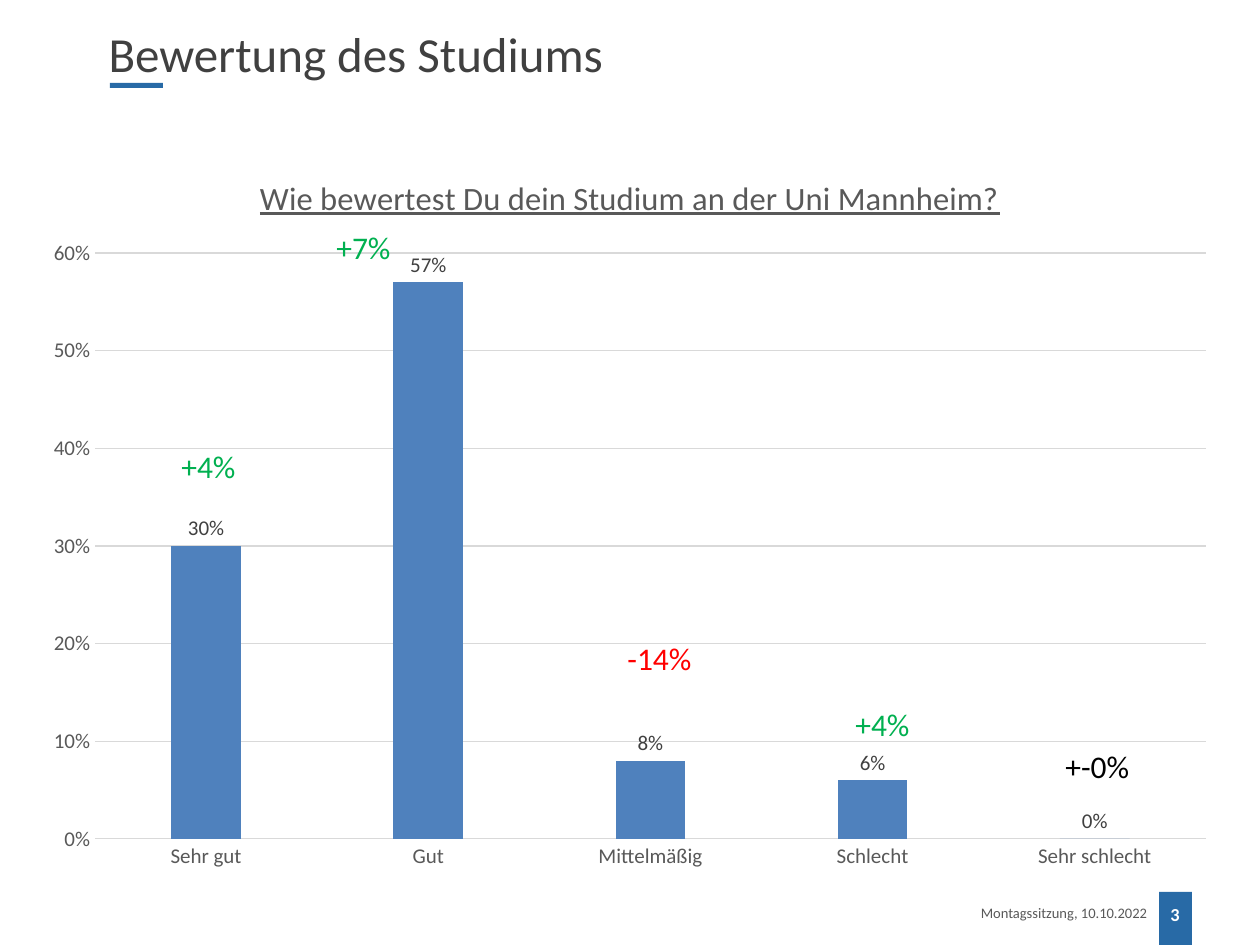
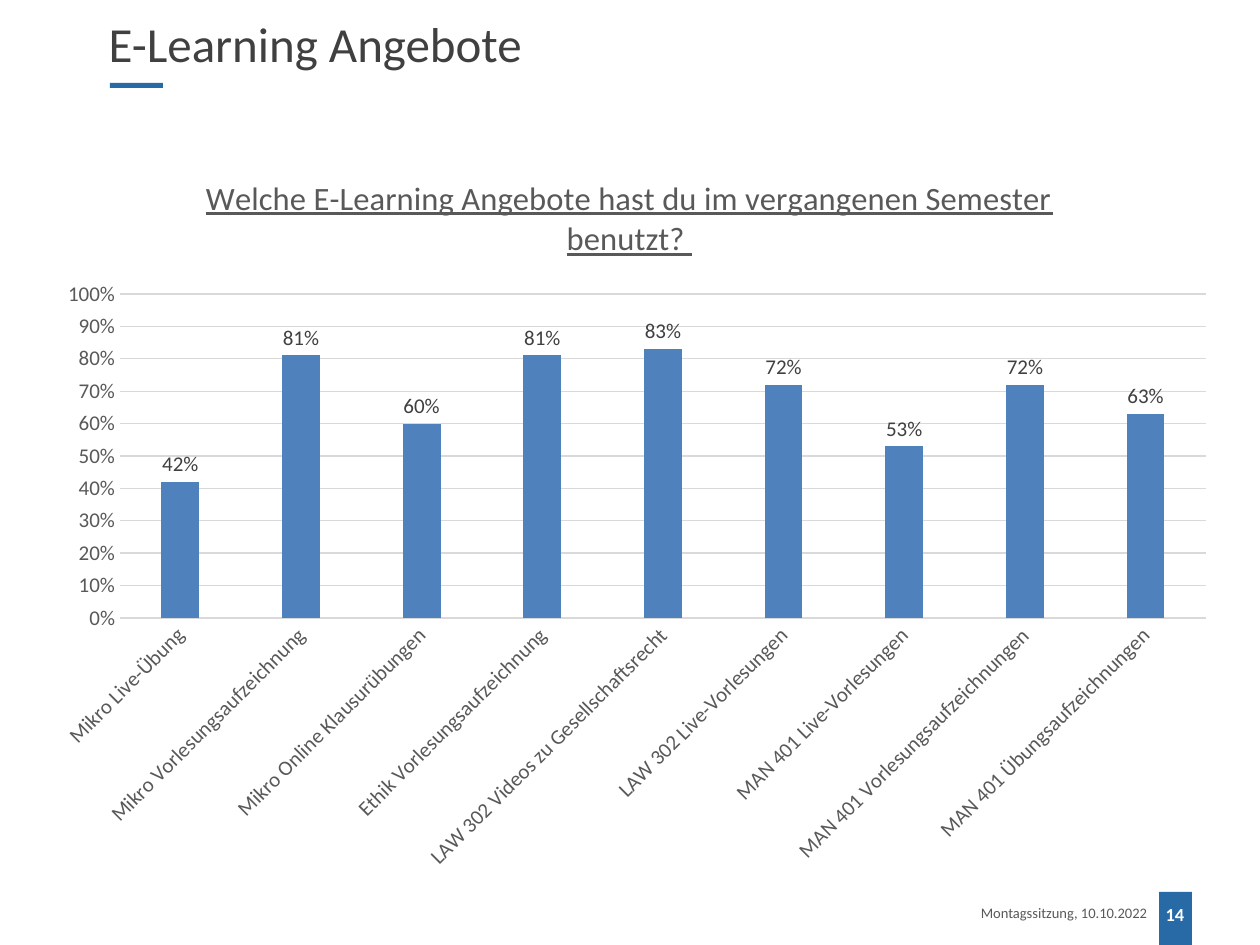
from dataclasses import dataclass

from lxml import etree
from pptx import Presentation
from pptx import util as u
from pptx.chart.data import CategoryChartData
from pptx.dml.color import RGBColor
from pptx.enum import chart as charts, shapes, text
from pptx.oxml import ns

EMU_PER_PX = 914400 / 126


@dataclass(frozen=True)
class Theme:
    font: str = "Calibri"
    accent: str = "286AA6"
    bar: str = "4F81BD"
    grid: str = "D9D9D9"
    heading: str = "404040"
    muted: str = "595959"
    white: str = "FFFFFF"
    rise: str = "00B050"
    fall: str = "FF0000"
    steady: str = "000000"
    heading_size: float = 28
    question_size: float = 18.6
    delta_size: float = 18
    chart_size: float = 12
    number_size: float = 10.5
    footer_size: float = 8.3


THEME = Theme()
FOOTER = "Montagssitzung, 10.10.2022"
CHART_FRAME = (30, 151, 1200, 733)
QUESTION_TOP = 169
PLOT_RIGHT = 1206


def px(length):
    return u.Emu(round(length * EMU_PER_PX))


def style(font, size, color, bold=False):
    font.name = THEME.font
    font.size = u.Pt(size)
    font.bold = bold
    font.color.rgb = RGBColor.from_string(color)


def place(shape, left, top, width, height):
    shape.left, shape.top = px(left), px(top)
    shape.width, shape.height = px(width), px(height)


def add_bar(page, *frame):
    bar = page.shapes.add_shape(shapes.MSO_SHAPE.RECTANGLE, *map(px, frame))
    bar.shadow.inherit = False
    bar.fill.solid()
    bar.fill.fore_color.rgb = RGBColor.from_string(THEME.accent)
    bar.line.fill.background()


def add_text(page, frame, words, size, color, align=text.PP_ALIGN.LEFT,
             anchor=text.MSO_ANCHOR.TOP, bold=False):
    box = page.shapes.add_textbox(*map(px, frame)).text_frame
    box.word_wrap = True
    box.vertical_anchor = anchor
    para = box.paragraphs[0]
    para.text = words
    para.alignment = align
    style(para.font, size, color, bold)
    return box


def add_page(deck, heading, number, heading_top, heading_height):
    """Add a page with its heading, accent bar, footer and page number."""
    page = deck.slides.add_slide(deck.slide_layouts[5])
    title = page.shapes.title
    place(title, 96, heading_top, 1134, heading_height)
    title.text_frame.vertical_anchor = text.MSO_ANCHOR.TOP
    title.text_frame.auto_size = text.MSO_AUTO_SIZE.NONE
    para = title.text_frame.paragraphs[0]
    para.text = heading
    para.alignment = text.PP_ALIGN.LEFT
    style(para.font, THEME.heading_size, THEME.heading)

    add_bar(page, 110, 83, 53, 5)
    add_bar(page, 1159, 892, 33, 53)
    middle = text.MSO_ANCHOR.MIDDLE
    add_text(page, (1138, 889, 74, 50), str(number), THEME.number_size,
             THEME.white, text.PP_ALIGN.CENTER, middle, bold=True)
    footer = add_text(page, (750, 888, 407, 50), FOOTER, THEME.footer_size,
                      THEME.muted, text.PP_ALIGN.RIGHT, middle)
    footer.margin_right = px(10)
    return page


def set_layout(parent, **values):
    """Give a chart part a manual layout, in fractions of the chart."""
    layout = parent.find(ns.qn("c:layout"))
    if layout is None:
        layout = etree.Element(ns.qn("c:layout"))
        parent.insert(0, layout)
    manual = etree.SubElement(layout, ns.qn("c:manualLayout"))
    for name, value in values.items():
        etree.SubElement(manual, ns.qn(f"c:{name}")).set("val", str(value))


def fractions(x, y):
    left, top, width, height = CHART_FRAME
    return round((x - left) / width, 4), round((y - top) / height, 4)


def style_line(line):
    line.color.rgb = RGBColor.from_string(THEME.grid)
    line.width = u.Pt(0.75)


def style_axes(chart, maximum, label_angle):
    for axis in (chart.category_axis, chart.value_axis):
        axis.major_tick_mark = axis.minor_tick_mark = charts.XL_TICK_MARK.NONE
        style(axis.tick_labels.font, THEME.chart_size, THEME.muted)
    style_line(chart.category_axis.format.line)
    body = chart.category_axis._element.find(ns.qn("c:txPr")).find(ns.qn("a:bodyPr"))
    body.set("rot", str(label_angle * 60000))

    values = chart.value_axis
    values.minimum_scale, values.maximum_scale = 0, maximum
    values.major_unit = 0.1
    values.format.line.fill.background()
    values.has_major_gridlines = True
    style_line(values.major_gridlines.format.line)
    values.tick_labels.number_format = "0%"
    values.tick_labels.number_format_is_linked = False


def style_bars(plot):
    plot.gap_width, plot.overlap = 219, -27
    plot.vary_by_categories = False
    fill = plot.series[0].format.fill
    fill.solid()
    fill.fore_color.rgb = RGBColor.from_string(THEME.bar)
    plot.has_data_labels = True
    labels = plot.data_labels
    labels.show_value = True
    labels.position = charts.XL_LABEL_POSITION.OUTSIDE_END
    labels.number_format = "0%"
    labels.number_format_is_linked = False
    style(labels.font, THEME.chart_size, THEME.heading)


def add_survey_chart(page, question, question_left, answers, maximum,
                     plot_left, plot_top, plot_bottom, label_angle=0):
    data = CategoryChartData(number_format="0%")
    data.categories = list(answers)
    data.add_series("Series 1", list(answers.values()))
    chart = page.shapes.add_chart(charts.XL_CHART_TYPE.COLUMN_CLUSTERED,
                                  *map(px, CHART_FRAME), data).chart
    chart.has_legend = False
    chart.font.name = THEME.font
    chart.font.size = u.Pt(THEME.chart_size)

    chart.has_title = True
    para = chart.chart_title.text_frame.paragraphs[0]
    para.text = question
    style(para.font, THEME.question_size, THEME.muted)
    para.font.underline = True
    x, y = fractions(question_left, QUESTION_TOP)
    set_layout(chart.chart_title._element, xMode="edge", yMode="edge", x=x, y=y)

    x, y = fractions(plot_left, plot_top)
    right, bottom = fractions(PLOT_RIGHT, plot_bottom)
    set_layout(chart._chartSpace.chart.plotArea, layoutTarget="inner",
               xMode="edge", yMode="edge", x=x, y=y,
               w=round(right - x, 4), h=round(bottom - y, 4))
    style_axes(chart, maximum, label_angle)
    style_bars(chart.plots[0])


def add_delta(page, words, color, left, top):
    box = add_text(page, (left, top, 100, 50), words, THEME.delta_size, color)
    box.margin_right = 0


def build_rating(deck):
    page = add_page(deck, "Bewertung des Studiums", 3, 17, 88)
    answers = {"Sehr gut": 0.3, "Gut": 0.57, "Mittelmäßig": 0.08,
               "Schlecht": 0.06, "Sehr schlecht": 0}
    add_survey_chart(page, "Wie bewertest Du dein Studium an der Uni Mannheim?",
                     254, answers, 0.6, plot_left=95, plot_top=253, plot_bottom=839)
    for delta in (("+4%", THEME.rise, 169, 441), ("+7%", THEME.rise, 324, 222),
                  ("-14%", THEME.fall, 615, 633), ("+4%", THEME.rise, 843, 699),
                  ("+-0%", THEME.steady, 1053, 741)):
        add_delta(page, *delta)


def build_e_learning(deck):
    page = add_page(deck, "E-Learning Angebote", 14, 7, 110)
    answers = {
        "Mikro Live-Übung": 0.42,
        "Mikro Vorlesungsaufzeichnung": 0.81,
        "Mikro Online Klausurübungen": 0.6,
        "Ethik Vorlesungsaufzeichnung": 0.81,
        "LAW 302 Videos zu Gesellschaftsrecht": 0.83,
        "LAW 302 Live-Vorlesungen": 0.72,
        "MAN 401 Live-Vorlesungen": 0.53,
        "MAN 401 Vorlesungsaufzeichnungen": 0.72,
        "MAN 401 Übungsaufzeichnungen": 0.63,
    }
    question = "Welche E-Learning Angebote hast du im vergangenen Semester benutzt? "
    add_survey_chart(page, question, 200, answers, 1, plot_left=120,
                     plot_top=294, plot_bottom=618, label_angle=-45)


def main():
    deck = Presentation()
    deck.slide_width, deck.slide_height = px(1260), px(945)
    build_rating(deck)
    build_e_learning(deck)
    deck.save("out.pptx")


if __name__ == "__main__":
    main()
